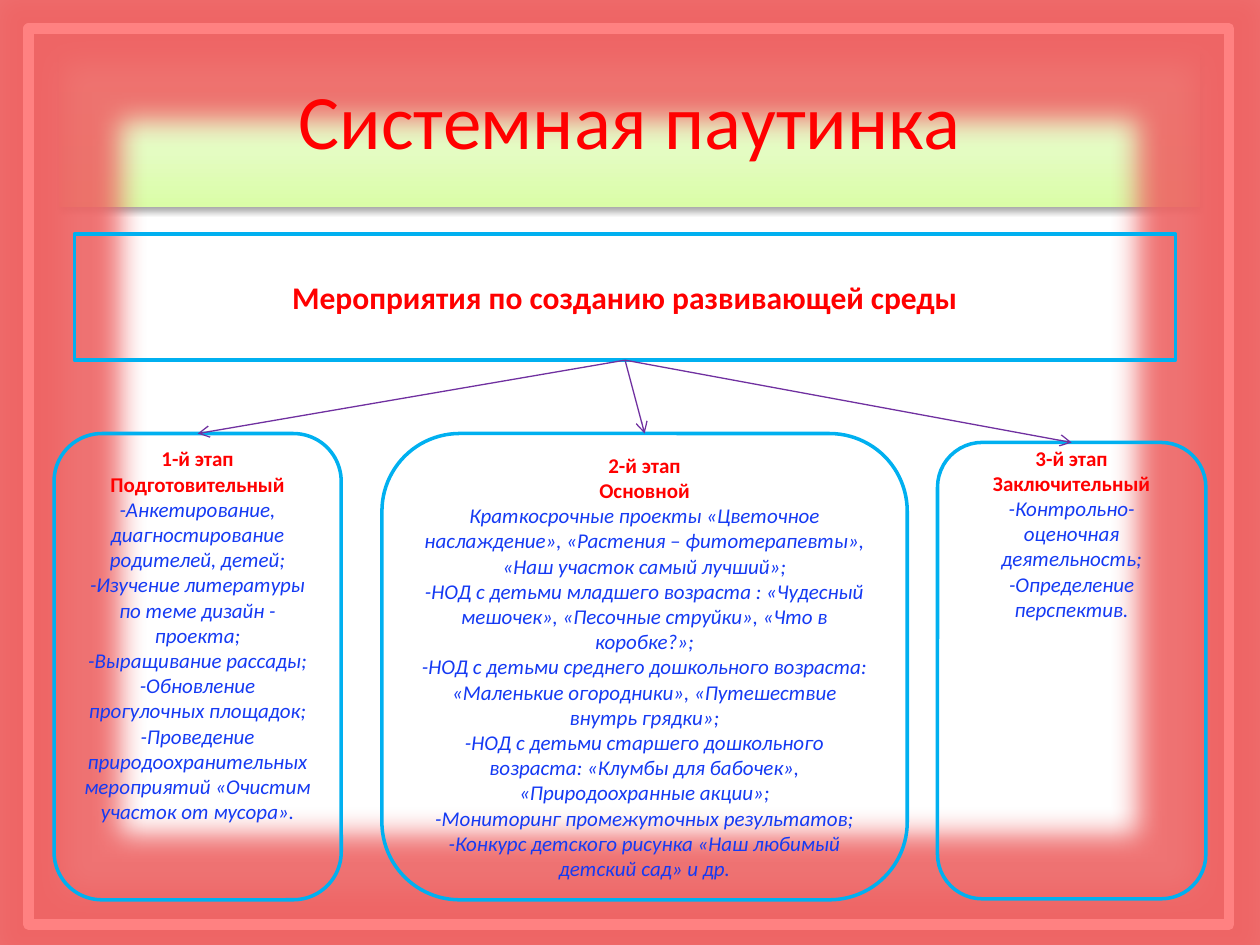
from lxml import etree
from pptx import Presentation
from pptx.dml.color import RGBColor
from pptx.enum.shapes import MSO_CONNECTOR, MSO_SHAPE
from pptx.enum.text import MSO_ANCHOR, PP_ALIGN
from pptx.oxml import parse_xml
from pptx.oxml.ns import nsdecls, qn
from pptx.util import Cm, Pt

RECT, ROUND = MSO_SHAPE.RECTANGLE, MSO_SHAPE.ROUNDED_RECTANGLE
STRAIGHT = MSO_CONNECTOR.STRAIGHT
MIDDLE, CENTER = MSO_ANCHOR.MIDDLE, PP_ALIGN.CENTER
FONT = "Calibri"
RED, BLUE, CYAN, PURPLE = "FF0000", "153AF3", "00B0F0", "7030A0"

# left, top, width, height, bottom inset, heading lines, body lines
STAGES = [
    (1.09, 8.74, 5.79, 9.4, 1.4, ["1-й этап", "Подготовительный"], [
        "-Анкетирование, диагностирование родителей, детей;",
        "-Изучение литературы по теме дизайн - проекта;",
        "-Выращивание рассады;",
        "-Обновление прогулочных площадок;",
        "-Проведение природоохранительных мероприятий «Очистим участок от мусора».",
    ]),
    (7.7, 8.74, 10.59, 9.4, 0.13, ["2-й этап", "Основной"], [
        "Краткосрочные проекты «Цветочное наслаждение», «Растения – фитотерапевты», "
        "«Наш участок самый лучший»;",
        "-НОД с детьми младшего возраста : «Чудесный мешочек», «Песочные струйки», "
        "«Что в коробке?»;",
        "-НОД с детьми среднего дошкольного возраста: «Маленькие огородники», "
        "«Путешествие внутрь грядки»;",
        "-НОД с детьми старшего дошкольного возраста: «Клумбы для бабочек», "
        "«Природоохранные акции»;",
        "-Мониторинг промежуточных результатов;",
        "-Конкурс детского рисунка «Наш любимый детский сад» и др.",
    ]),
    (18.9, 8.92, 5.41, 9.2, 5.66, ["3-й этап", "Заключительный"], [
        "-Контрольно-оценочная деятельность;",
        "-Определение перспектив.",
    ]),
]


def color(value):
    return RGBColor.from_string(value)


def add_box(s, kind, box, line=None, width=2):
    """Add an unfilled shape; box is left, top, width, height in cm."""
    sp = s.shapes.add_shape(kind, *map(Cm, box))
    sp.shadow.inherit = False
    sp.fill.background()
    if line:
        sp.line.color.rgb = color(line)
        sp.line.width = Pt(width)
    else:
        sp.line.fill.background()
    return sp


def set_effect(sp, effect):
    """Replace the shape's empty effect list by one effect."""
    spPr = sp.fill._xPr
    old = spPr.find(qn("a:effectLst"))
    new = parse_xml(f'<a:effectLst {nsdecls("a")}>{effect}</a:effectLst>')
    spPr.replace(old, new)


def add_panel(s):
    sp = add_box(s, RECT, (1.19, 0.99, 23.01, 3.18))
    stops = "".join(
        f'<a:gs pos="{pos * 1000}"><a:srgbClr val="{value}"/></a:gs>'
        for pos, value in [(0, "DAFDA7"), (35, "E4FCC2"), (100, "F5FFE7")])
    spPr = sp.fill._xPr
    spPr.replace(spPr.find(qn("a:noFill")), parse_xml(
        f'<a:gradFill {nsdecls("a")} rotWithShape="1"><a:gsLst>{stops}</a:gsLst>'
        '<a:lin ang="16200000" scaled="0"/></a:gradFill>'))
    set_effect(sp, f'<a:outerShdw blurRad="{Pt(3.5)}" dist="{Pt(2.2)}" dir="5400000" '
                   'rotWithShape="0"><a:srgbClr val="000000"><a:alpha val="32000"/>'
                   '</a:srgbClr></a:outerShdw>')


def add_frame(s):
    sp = add_box(s, RECT, (0.58, 0.58, 24.2, 18.06), "FF8181", 6)
    set_effect(sp, f'<a:glow rad="{Pt(32)}"><a:srgbClr val="EE6464">'
                   '<a:alpha val="90000"/></a:srgbClr></a:glow>')


def write(sp, lines, bottom=0.13):
    """Write centred lines of (text, size, colour, bold, italic)."""
    tf = sp.text_frame
    tf.word_wrap = True
    tf.vertical_anchor = MIDDLE
    tf.margin_bottom = Cm(bottom)
    for i, (text, size, value, bold, italic) in enumerate(lines):
        p = tf.add_paragraph() if i else tf.paragraphs[0]
        p.alignment = CENTER
        r = p.add_run()
        r.text = text
        r.font.name = FONT
        r.font.size = Pt(size)
        r.font.bold = bold
        r.font.italic = italic
        r.font.color.rgb = color(value)


def add_arrow(s, start, end):
    c = s.shapes.add_connector(STRAIGHT, *start, *end)
    c.line.color.rgb = color(PURPLE)
    c.line.width = Pt(0.75)
    etree.SubElement(c.line._get_or_add_ln(), qn("a:tailEnd"), type="arrow")
    etree.SubElement(c._element.spPr, qn("a:effectLst"))


def main():
    prs = Presentation()
    prs.slide_width, prs.slide_height = Cm(25.4), Cm(19.05)
    s = prs.slides.add_slide(prs.slide_layouts[6])

    add_panel(s)
    add_frame(s)
    title = s.shapes.add_textbox(Cm(1.27), Cm(1.93), Cm(22.86), Cm(2.59))
    write(title, [("Системная паутинка", 44, RED, False, False)], bottom=1.8)

    header = add_box(s, RECT, (1.5, 4.72, 22.2, 2.54), CYAN)
    write(header, [("Мероприятия по созданию развивающей среды", 18, RED, True, False)])
    start = header.left + header.width // 2, header.top + header.height

    stages = []
    for *box, bottom, heading, body in STAGES:
        sp = add_box(s, ROUND, box, CYAN)
        write(sp, [(text, 12, RED, True, False) for text in heading]
              + [(text, 12, BLUE, False, True) for text in body], bottom)
        stages.append(sp)
    for sp in stages:
        add_arrow(s, start, (sp.left + sp.width // 2, sp.top))

    prs.save("out.pptx")


if __name__ == "__main__":
    main()
